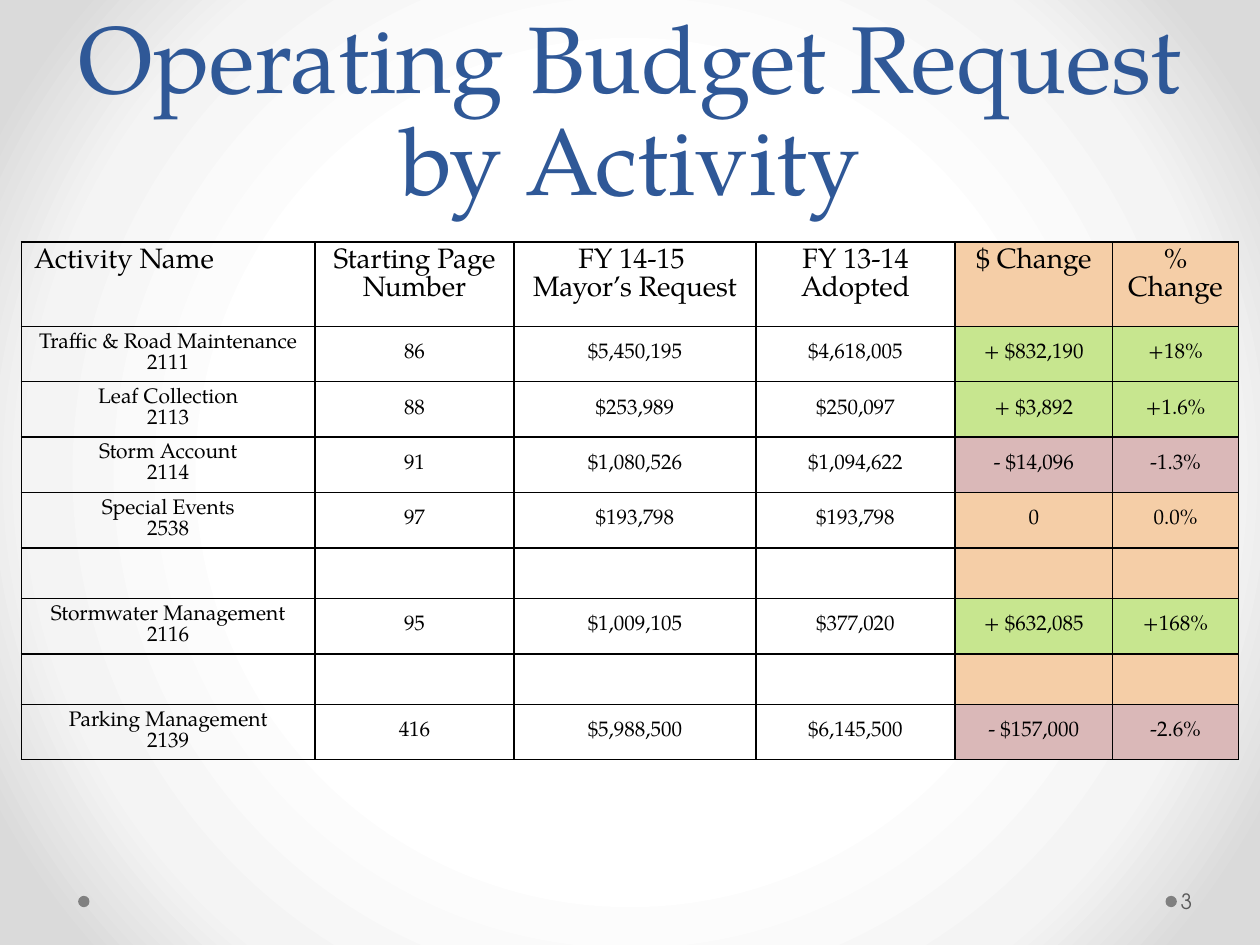
from lxml import etree
from pptx import Presentation
from pptx.dml.color import RGBColor
from pptx.enum.shapes import MSO_SHAPE
from pptx.enum.text import MSO_ANCHOR, PP_ALIGN
from pptx.oxml import parse_xml
from pptx.util import Inches, Pt

LEFT, CENTER = PP_ALIGN.LEFT, PP_ALIGN.CENTER
TOP, MIDDLE, BOTTOM = MSO_ANCHOR.TOP, MSO_ANCHOR.MIDDLE, MSO_ANCHOR.BOTTOM
OVAL = MSO_SHAPE.OVAL
NS = "http://schemas.openxmlformats.org/drawingml/2006/main"
SERIF, SANS = "TeX Gyre Pagella", "TeX Gyre Adventor"
PEACH, GREEN, ROSE = "F5CEA7", "C7E68F", "DAB8B8"


def rgb(code):
    return RGBColor.from_string(code)


def write(tf, text, size=12, font=SERIF, color="000000", align=CENTER, spacing=None):
    """Fill a text frame, one paragraph for each line of text."""
    for i, line in enumerate(text.split("\n")):
        p = tf.paragraphs[0] if i == 0 else tf.add_paragraph()
        p.alignment = align
        if spacing:
            p.line_spacing = Pt(spacing)
        if line:
            r = p.add_run()
            r.text = line
            r.font.size, r.font.name = Pt(size), font
            r.font.color.rgb = rgb(color)


prs = Presentation()
prs.slide_width, prs.slide_height = Inches(10), Inches(7.5)
s = prs.slides.add_slide(prs.slide_layouts[6])

# Background: white centre fading to grey corners
s.background.fill.gradient()
grad = s.background._cSld.bg.bgPr[0]
stops = "".join(
    f'<a:gs pos="{share * 1000}"><a:srgbClr val="{code}"/></a:gs>'
    for share, code in [(50, "FFFFFF"), (76, "F4F4F4"), (92, "DADADA")])
grad.getparent().replace(grad, parse_xml(
    f'<a:gradFill xmlns:a="{NS}" rotWithShape="1"><a:gsLst>{stops}</a:gsLst>'
    '<a:path path="circle"><a:fillToRect l="50000" t="50000" r="50000" b="50000"/>'
    '</a:path></a:gradFill>'))

# Footer dots
for x in (9.25, 0.62):
    dot = s.shapes.add_shape(OVAL, Inches(x), Inches(7.11), Inches(0.09), Inches(0.09))
    dot.shadow.inherit = False
    dot.fill.solid()
    dot.fill.fore_color.rgb = rgb("808080")
    dot.line.fill.background()

# Title
tf = s.shapes.add_textbox(Inches(0.5), 0, Inches(9), Inches(1.75)).text_frame
tf.word_wrap = True
tf.vertical_anchor = BOTTOM
write(tf, "Operating Budget Request by Activity", size=54, color="2F5897", spacing=58)

# Budget table: cell texts, then the fill of the two change columns
header = ["Activity Name", "Starting Page Number", "FY 14-15 \nMayor’s Request",
          "FY 13-14 Adopted", "$ Change", "% Change"]
blank = [""] * 6
rows = [
    (header, PEACH),
    (["Traffic & Road Maintenance\n2111", "86", "$5,450,195", "$4,618,005",
      "+ $832,190", "+18%"], GREEN),
    (["Leaf Collection\n2113", "88", "$253,989", "$250,097", "+ $3,892", "+1.6%"], GREEN),
    (["Storm Account\n2114", "91", "$1,080,526", "$1,094,622", "- $14,096", "-1.3%"], ROSE),
    (["Special Events\n2538", "97", "$193,798", "$193,798", "0", "0.0%"], PEACH),
    (blank, PEACH),
    (["Stormwater Management\n2116", "95", "$1,009,105", "$377,020",
      "+ $632,085", "+168%"], GREEN),
    (blank, PEACH),
    (["Parking Management\n2139", "416", "$5,988,500", "$6,145,500",
      "- $157,000", "-2.6%"], ROSE),
]
col_widths = [2.33, 1.58, 1.92, 1.58, 1.25, 1]
row_heights = [0.67 if t is header else 0.27 if t is blank else 0.44 for t, _ in rows]

table = s.shapes.add_table(
    len(rows), len(col_widths), Inches(0.17), Inches(1.92),
    Inches(sum(col_widths)), Inches(sum(row_heights))).table
table.first_row = table.horz_banding = False
for col, width in zip(table.columns, col_widths):
    col.width = Inches(width)
for row, height in zip(table.rows, row_heights):
    row.height = Inches(height)

for i, (texts, change_fill) in enumerate(rows):
    size = 16 if texts is header else 12
    for j, text in enumerate(texts):
        cell = table.cell(i, j)
        cell.vertical_anchor = TOP if texts is header else MIDDLE
        write(cell.text_frame, text, size=size, spacing=size,
              align=LEFT if i == j == 0 else CENTER)
        if j >= 4:
            cell.fill.solid()
            cell.fill.fore_color.rgb = rgb(change_fill)
        else:
            cell.fill.background()
        tcPr = cell._tc.get_or_add_tcPr()
        for k, side in enumerate("LRTB"):
            ln = etree.Element(f"{{{NS}}}ln{side}", w=str(Pt(1)))
            fill = etree.SubElement(ln, f"{{{NS}}}solidFill")
            etree.SubElement(fill, f"{{{NS}}}srgbClr", val="000000")
            tcPr.insert(k, ln)

# Page number
tf = s.shapes.add_textbox(Inches(9.34), Inches(6.95), Inches(0.61), Inches(0.4)).text_frame
tf.word_wrap = True
tf.vertical_anchor = MIDDLE
tf.margin_left, tf.margin_right = Inches(0.03), Inches(0.05)
write(tf, "3", font=SANS, color="595959", align=LEFT)

prs.save("out.pptx")
